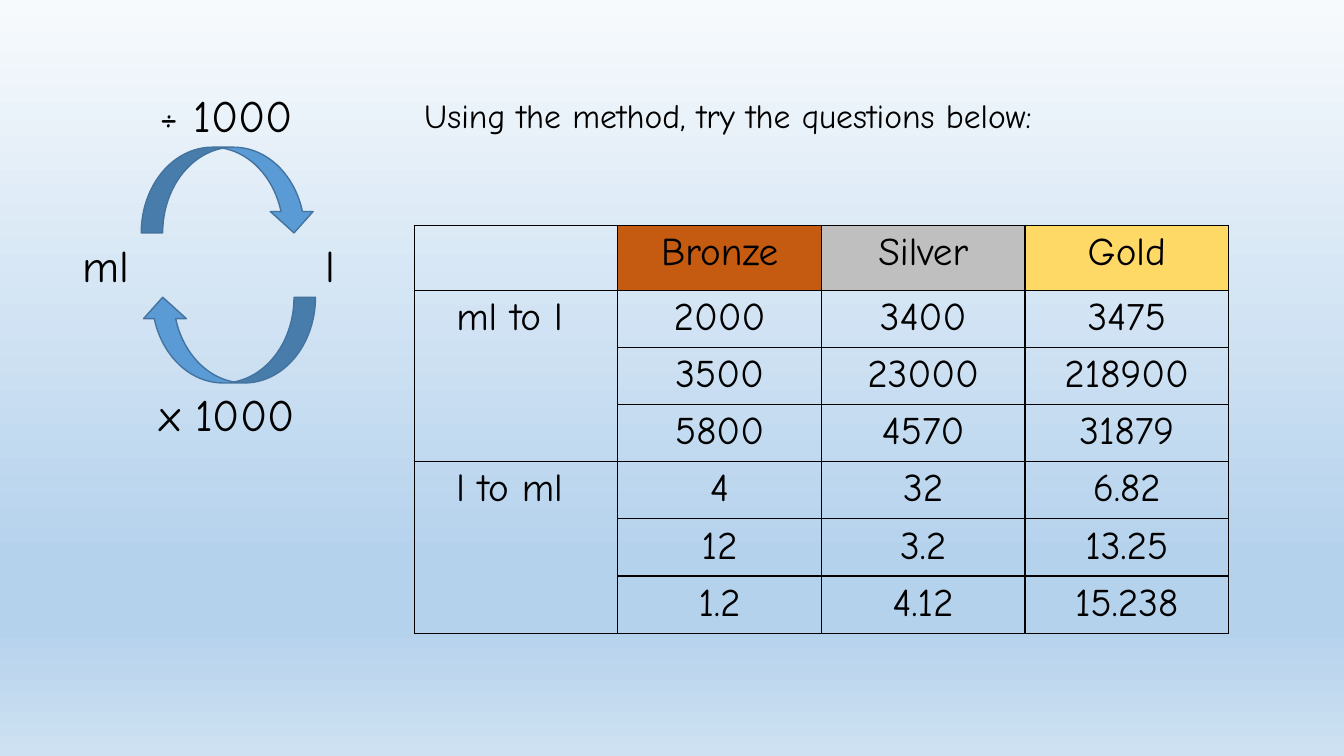
from lxml import etree
from pptx import Presentation
from pptx.dml.color import RGBColor
from pptx.enum.shapes import MSO_SHAPE
from pptx.enum.text import MSO_AUTO_SIZE, PP_ALIGN
from pptx.oxml.ns import qn
from pptx.util import Cm, Pt

ARROW = MSO_SHAPE.CURVED_DOWN_ARROW
CENTER = PP_ALIGN.CENTER
GROW = MSO_AUTO_SIZE.SHAPE_TO_FIT_TEXT

FONT = "Comic Neue"
COLORS = {
    "text": "000000", "border": "000000",
    "arrow": "5B9BD5", "arrow_line": "43739E",
    "bronze": "C55A11", "silver": "BFBFBF", "gold": "FFD966",
}
BACKGROUND = [(0, "F7FAFD"), (74, "B5D2EC"), (83, "B5D2EC"), (100, "CEE1F2")]

# text, left, top, width, height (cm), size (pt)
LABELS = [
    ("ml", 1.83, 5.87, 1.7, 1.62, 32),
    ("l", 7.95, 5.87, 0.81, 1.62, 32),
    ("÷ 1000", 3.76, 2.08, 3.99, 1.62, 32),
    ("x 1000", 3.76, 9.63, 4.11, 1.62, 32),
    ("Using the method, try the questions below:", 10.44, 2.26, 17.65, 1.27, 24),
]

# top (cm), rotation
ARROWS = [(3.71, 0), (7.49, 180)]
ARROW_LEFT, ARROW_W, ARROW_H = 3.56, 4.39, 2.16

MEDALS = ["Bronze", "Silver", "Gold"]
QUESTIONS = [
    ("ml to l ", [("2000", "3400", "3475"),
                  ("3500", "23000", "218900"),
                  ("5800", "4570", "31879")]),
    ("l to ml ", [("4", "32", "6.82"),
                  ("12", "3.2", "13.25"),
                  ("1.2", "4.12", "15.238")]),
]
TABLE_LEFT, TABLE_TOP = 10.44, 5.68
COL_W, HEADER_H, ROW_H = 5.13, 1.63, 1.44


def rgb(name):
    return RGBColor.from_string(COLORS[name])


def style(p, size):
    for r in p.runs:
        r.font.name = FONT
        r.font.size = Pt(size)
        r.font.bold = False
        r.font.color.rgb = rgb("text")


def add_background(s):
    fill = s.background.fill
    fill.gradient()
    fill.gradient_angle = 270
    stops = next(s.element.iter(qn("a:gsLst")))
    for stop in list(stops):
        stops.remove(stop)
    for percent, color in BACKGROUND:
        stop = etree.SubElement(stops, qn("a:gs"), pos=str(percent * 1000))
        etree.SubElement(stop, qn("a:srgbClr"), val=color)


def add_label(s, text, left, top, width, height, size):
    box = s.shapes.add_textbox(Cm(left), Cm(top), Cm(width), Cm(height))
    tf = box.text_frame
    tf.word_wrap = False
    tf.auto_size = GROW
    tf.text = text
    style(tf.paragraphs[0], size)


def add_arrow(s, top, rotation):
    sp = s.shapes.add_shape(ARROW, Cm(ARROW_LEFT), Cm(top), Cm(ARROW_W), Cm(ARROW_H))
    sp.rotation = rotation
    sp.shadow.inherit = False
    sp.fill.solid()
    sp.fill.fore_color.rgb = rgb("arrow")
    sp.line.color.rgb = rgb("arrow_line")
    sp.line.width = Pt(1)


def add_borders(cell):
    """Put a line on all four sides, ahead of the fill in the cell properties."""
    props = cell._tc.get_or_add_tcPr()
    for i, side in enumerate(("lnL", "lnR", "lnT", "lnB")):
        ln = etree.Element(qn(f"a:{side}"), w=str(Pt(1)))
        solid = etree.SubElement(ln, qn("a:solidFill"))
        etree.SubElement(solid, qn("a:srgbClr"), val=COLORS["border"])
        props.insert(i, ln)


def add_questions(s):
    rows = [["", *MEDALS]]
    groups = []
    for name, values in QUESTIONS:
        groups.append((len(rows), len(rows) + len(values) - 1))
        rows += [[name if i == 0 else "", *v] for i, v in enumerate(values)]

    n_cols = len(rows[0])
    height = HEADER_H + ROW_H * (len(rows) - 1)
    table = s.shapes.add_table(len(rows), n_cols, Cm(TABLE_LEFT), Cm(TABLE_TOP),
                               Cm(COL_W * n_cols), Cm(height)).table
    table.first_row = table.horz_banding = False
    for col in table.columns:
        col.width = Cm(COL_W)
    for i, row in enumerate(rows):
        table.rows[i].height = Cm(HEADER_H if i == 0 else ROW_H)
        for j, text in enumerate(row):
            cell = table.cell(i, j)
            if i == 0 and text:
                cell.fill.solid()
                cell.fill.fore_color.rgb = rgb(text.lower())
            else:
                cell.fill.background()
            add_borders(cell)
            if text:
                cell.text_frame.text = text
                p = cell.text_frame.paragraphs[0]
                p.alignment = CENTER
                style(p, 28)
    for first, last in groups:
        table.cell(first, 0).merge(table.cell(last, 0))


def main():
    prs = Presentation()
    prs.slide_width, prs.slide_height = Cm(33.87), Cm(19.05)
    s = prs.slides.add_slide(prs.slide_layouts[6])
    add_background(s)
    for arrow in ARROWS:
        add_arrow(s, *arrow)
    for label in LABELS:
        add_label(s, *label)
    add_questions(s)
    prs.save("out.pptx")


if __name__ == "__main__":
    main()
